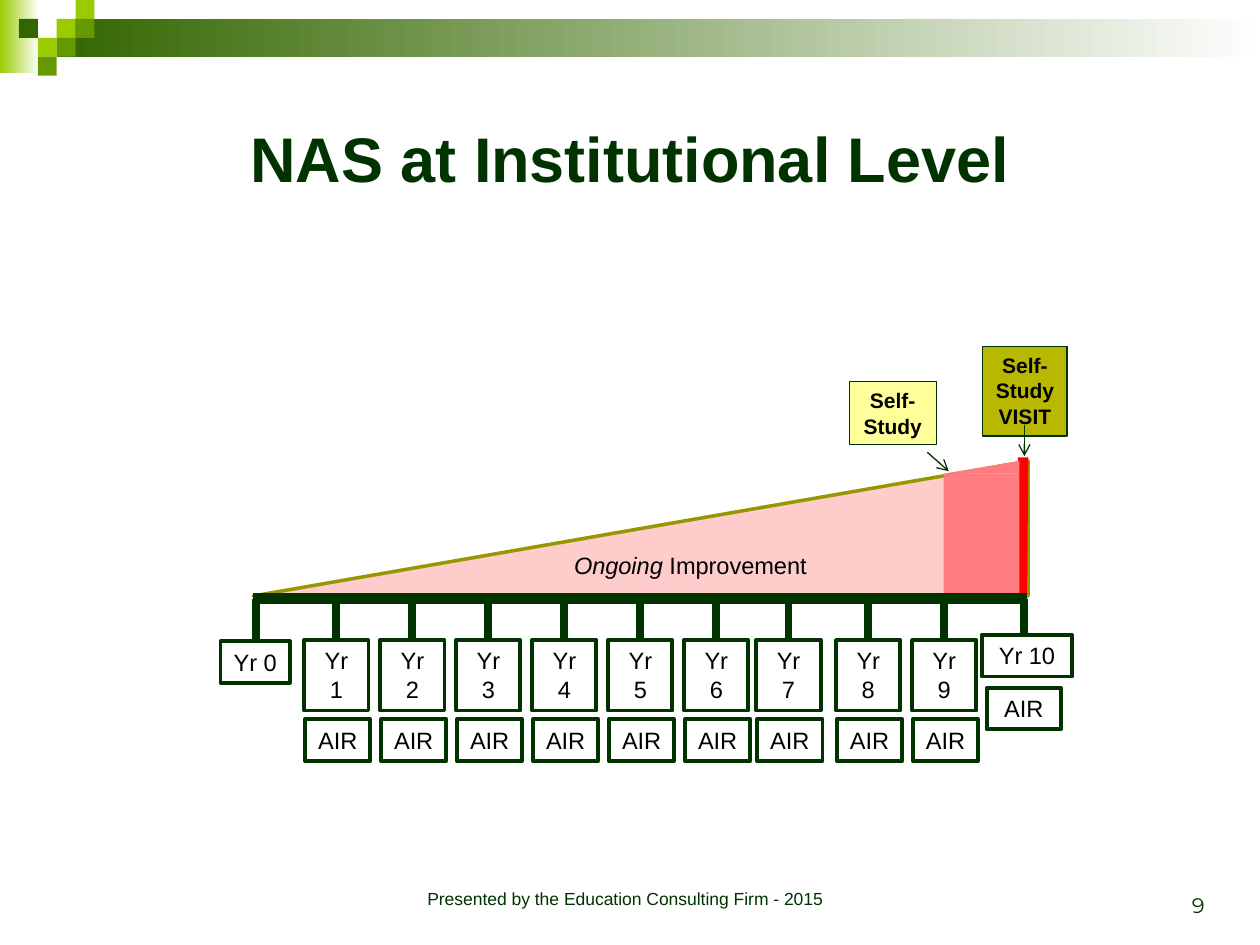
from dataclasses import dataclass

from lxml.etree import SubElement
from pptx import Presentation
from pptx.dml.color import RGBColor
from pptx.enum.shapes import MSO_CONNECTOR, MSO_SHAPE as Preset
from pptx.enum.text import MSO_ANCHOR as Anchor, PP_ALIGN as Align
from pptx.oxml.ns import qn
from pptx.util import Inches, Pt

COLORS = {
    "ink": "003300", "black": "000000", "white": "FFFFFF",
    "lime": "99CC00", "leaf": "669900", "forest": "336600",
    "olive": "B8B800", "slope": "979700", "lemon": "FFFF99",
    "blush": "FFCCCC", "coral": "FF7C80", "red": "FF0000",
}
CELL = 0.15         # mosaic square
AXIS_Y = 4.75       # timeline
FIRST_TICK, PITCH = 2.67, 0.603
YEAR_TOP, AIR_TOP = 5.08, 5.71
YEAR_SIZE, AIR_SIZE = (0.51, 0.56), (0.52, 0.33)
LABEL_SIZE = 13.5

prs = Presentation()
prs.slide_width, prs.slide_height = Inches(10), Inches(7.5)
slide = prs.slides.add_slide(prs.slide_layouts[6])


@dataclass
class Box:
    left: float
    top: float
    width: float
    height: float


@dataclass
class Year:
    number: int
    tick: float
    year_box: Box
    air_box: Box | None


def rgb(name: str) -> RGBColor:
    return RGBColor.from_string(COLORS[name])


def draw_shape(box: Box, fill: str | None = None, line: str | None = None,
               weight: float = 1, preset=Preset.RECTANGLE):
    shape = slide.shapes.add_shape(preset, Inches(box.left), Inches(box.top),
                                   Inches(box.width), Inches(box.height))
    shape.shadow.inherit = False
    if fill:
        shape.fill.solid()
        shape.fill.fore_color.rgb = rgb(fill)
    else:
        shape.fill.background()
    if line:
        shape.line.color.rgb = rgb(line)
        shape.line.width = Pt(weight)
    else:
        shape.line.fill.background()
    return shape


def draw_fade(box: Box, start: str) -> None:
    fill = draw_shape(box, start).fill
    fill.gradient()
    fill.gradient_angle = 0
    for stop, name, position in zip(fill.gradient_stops, (start, "white"), (0, 1)):
        stop.color.rgb = rgb(name)
        stop.position = position


def draw_line(x1: float, y1: float, x2: float, y2: float, weight: float,
              color: str = "ink", arrow: bool = False) -> None:
    line = slide.shapes.add_connector(MSO_CONNECTOR.STRAIGHT, Inches(x1), Inches(y1),
                                      Inches(x2), Inches(y2))
    line.line.color.rgb = rgb(color)
    line.line.width = Pt(weight)
    if arrow:
        SubElement(line.line._get_or_add_ln(), qn("a:tailEnd"), type="arrow")
    SubElement(line._element.spPr, qn("a:effectLst"))


def write(shape, lines: list[str], size: float, color: str = "black", bold: bool = False,
          wrap: bool = True, align=Align.CENTER, anchor=Anchor.TOP, font: str = "Arial"):
    frame = shape.text_frame
    frame.word_wrap = wrap
    frame.vertical_anchor = anchor
    frame.text = "\n".join(lines)
    for paragraph in frame.paragraphs:
        paragraph.alignment = align
        paragraph.font.name = font
        paragraph.font.size = Pt(size)
        paragraph.font.bold = bold
        paragraph.font.color.rgb = rgb(color)
    return frame


def text_box(box: Box):
    return slide.shapes.add_textbox(Inches(box.left), Inches(box.top),
                                    Inches(box.width), Inches(box.height))


def plan_year(number: int) -> Year:
    if number == 0:
        return Year(0, 2.03, Box(1.75, 5.09, 0.55, 0.33), None)
    if number == 10:
        return Year(10, 8.13, Box(7.79, 5.04, 0.72, 0.33), Box(7.83, 5.46, 0.59, 0.33))
    tick = FIRST_TICK + (number - 1) * PITCH - (0.03 if number == 7 else 0)
    return Year(number, tick, Box(tick - YEAR_SIZE[0] / 2, YEAR_TOP, *YEAR_SIZE),
                Box(tick + 0.01 - AIR_SIZE[0] / 2, AIR_TOP, *AIR_SIZE))


def draw_year(year: Year) -> None:
    draw_line(year.tick, AXIS_Y, year.tick, year.year_box.top, 4.5)
    write(draw_shape(year.year_box, line="ink", weight=2.25),
          [f"Yr {year.number}"], LABEL_SIZE, wrap=year.number > 0)
    if year.air_box:
        write(draw_shape(year.air_box, line="ink", weight=2.25),
              ["AIR"], LABEL_SIZE, wrap=False)


# Header band and mosaic
draw_fade(Box(0, 0, 0.31, 0.58), "lime")
draw_fade(Box(3 * CELL, CELL, 10 - 3 * CELL, 2 * CELL), "forest")
for column, row, shade in [(3, 1, "lime"), (4, 0, "lime"), (4, 1, "leaf"), (2, 2, "lime"),
                           (1, 1, "forest"), (3, 2, "leaf"), (2, 3, "leaf")]:
    draw_shape(Box(column * CELL, row * CELL, CELL, CELL), shade)

# Title
write(text_box(Box(0.5, 0.5, 9, 1.5)), ["NAS at Institutional Level"], 36, "ink",
      bold=True, anchor=Anchor.MIDDLE)

# Improvement wedge, with the self-study year and the visit
wedge = draw_shape(Box(4.55, 1.12, 1.07, 6.15), "blush", "slope", 2, Preset.RIGHT_TRIANGLE)
wedge.rotation = 270
draw_line(8.12, 3.63, 8.11, 4.72, 6, "red")
draw_shape(Box(7.49, 3.76, 0.6, 0.96), "coral")
study_peak = draw_shape(Box(7.49, 3.66, 0.6, 0.1), "coral", preset=Preset.ISOSCELES_TRIANGLE)
study_peak.adjustments[0] = 1

improvement = write(text_box(Box(3.8, 4.32, 3.36, 0.33)), ["Ongoing"], LABEL_SIZE).paragraphs[0]
improvement.runs[0].font.italic = True
improvement.add_run().text = " Improvement"

# Callouts
write(draw_shape(Box(7.8, 2.75, 0.67, 0.71), "olive", "ink", 0.75),
      ["Self-", "Study", "VISIT"], 12, bold=True, wrap=False)
draw_line(8.13, 3.37, 8.13, 3.62, 0.75, arrow=True)
write(draw_shape(Box(6.74, 3.03, 0.69, 0.5), "lemon", "ink", 0.75),
      ["Self-", "Study"], 12, bold=True, wrap=False)
draw_line(7.36, 3.59, 7.53, 3.74, 0.75, arrow=True)

# Timeline
draw_line(2.01, AXIS_Y, 8.15, AXIS_Y, 6)
for number in range(11):
    draw_year(plan_year(number))

# Footer
write(text_box(Box(2.75, 7, 4.42, 0.33)),
      ["Presented by the Education Consulting Firm - 2015"], 10, "ink")
write(text_box(Box(7.33, 6.83, 2.33, 0.5)), ["9"], 12, "ink",
      align=Align.RIGHT, anchor=Anchor.BOTTOM, font="Montserrat")

prs.save("out.pptx")
